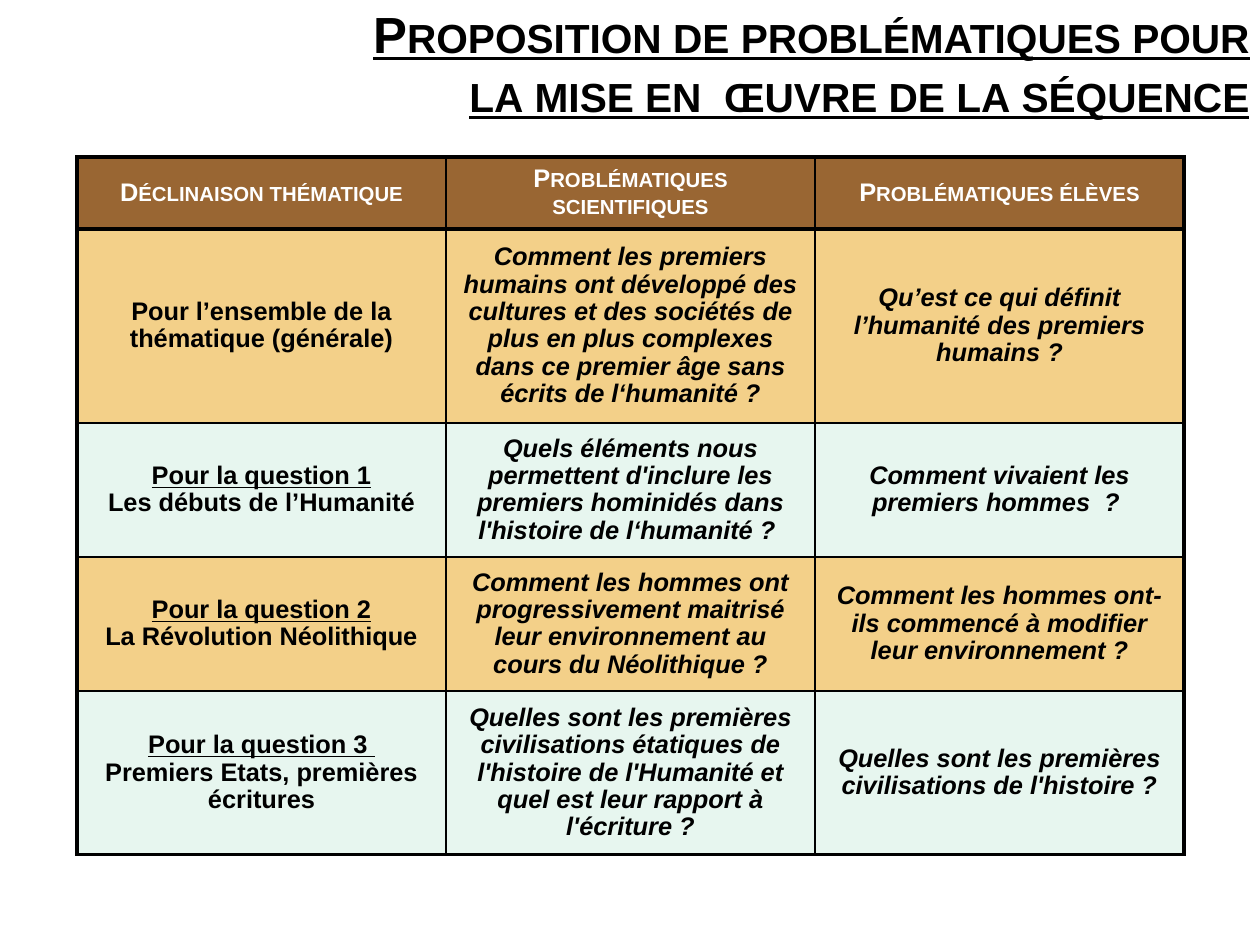
import pptx
import pptx.util
import pptx.dml.color
import pptx.enum.text
import pptx.oxml.ns
import lxml.etree

PX = 8000  # EMU in one px
HUES = {"ink": "000000", "white": "FFFFFF", "brown": "996633",
        "sand": "F3D089", "mint": "E7F6EF"}
FACE = "Arial"
ALIGN = pptx.enum.text.PP_ALIGN
ANCHOR = pptx.enum.text.MSO_ANCHOR


def style(para, size, hue, align, caps=False, line=False, slant=False):
    para.alignment = align
    para.line_spacing = 0.97
    for run in para.runs:
        font = run.font
        font.name, font.size = FACE, pptx.util.Pt(size)
        font.bold, font.italic, font.underline = True, slant, line
        font.color.rgb = pptx.dml.color.RGBColor.from_string(HUES[hue])
        if caps:
            run._r.get_or_add_rPr().set("cap", "small")


def border(cell, side, width):
    """Draw one side (L, R, T or B) of a cell, width in points."""
    name = pptx.oxml.ns.qn
    line = lxml.etree.SubElement(cell._tc.get_or_add_tcPr(), name("a:ln" + side),
                                 w=str(pptx.util.Pt(width)))
    fill = lxml.etree.SubElement(line, name("a:solidFill"))
    lxml.etree.SubElement(fill, name("a:srgbClr"), val=HUES["ink"])


deck = pptx.Presentation()
deck.slide_width, deck.slide_height = 1260 * PX, 945 * PX
slide = deck.slides.add_slide(deck.slide_layouts[5])

# Title
title = slide.shapes.title
title.left, title.top, title.width, title.height = 351 * PX, 0, 910 * PX, 126 * PX
frame = title.text_frame
frame.text = "Proposition de problématiques pour la mise en  œuvre de la séquence"
frame.word_wrap = True
frame.auto_size = pptx.enum.text.MSO_AUTO_SIZE.NONE
frame.vertical_anchor = ANCHOR.TOP
style(frame.paragraphs[0], 32, "ink", ALIGN.RIGHT, caps=True, line=True)

# Table
ROWS = [
    ("Déclinaison thématique", "Problématiques scientifiques",
     "Problématiques élèves"),
    ("Pour l’ensemble de la thématique (générale)",
     "Comment les premiers humains ont développé des cultures et des sociétés "
     "de plus en plus complexes dans ce premier âge sans écrits de l‘humanité ?",
     "Qu’est ce qui définit l’humanité des premiers humains ?"),
    ("Pour la question 1\nLes débuts de l’Humanité",
     "Quels éléments nous permettent d'inclure les premiers hominidés dans "
     "l'histoire de l‘humanité ? ",
     "Comment vivaient les premiers hommes  ? "),
    ("Pour la question 2\nLa Révolution Néolithique",
     "Comment les hommes ont progressivement maitrisé leur environnement "
     "au cours du Néolithique ?",
     "Comment les hommes ont-ils commencé à modifier leur environnement ?"),
    ("Pour la question 3 \nPremiers Etats, premières écritures",
     "Quelles sont les premières civilisations étatiques de l'histoire de "
     "l'Humanité et quel est leur rapport à l'écriture ?",
     "Quelles sont les premières civilisations de l'histoire ?"),
]
TALL = [72, 194, 134, 134, 164]
WIDE = 369
THICK, THIN = 2.25, 1

last = len(ROWS) - 1
table = slide.shapes.add_table(len(ROWS), 3, 77 * PX, 157 * PX,
                               3 * WIDE * PX, sum(TALL) * PX).table
table.horz_banding = False
for col in table.columns:
    col.width = WIDE * PX

for r, texts in enumerate(ROWS):
    table.rows[r].height = TALL[r] * PX
    head = r == 0
    back = "brown" if head else "sand" if r % 2 else "mint"
    for c, text in enumerate(texts):
        cell = table.cell(r, c)
        border(cell, "L", THICK if c == 0 else THIN)
        border(cell, "R", THICK if c == 2 else THIN)
        border(cell, "T", THICK if r < 2 else THIN)
        border(cell, "B", THICK if r in (0, last) else THIN)
        cell.fill.solid()
        cell.fill.fore_color.rgb = pptx.dml.color.RGBColor.from_string(HUES[back])
        cell.vertical_anchor = ANCHOR.MIDDLE
        cell.text_frame.text = text
        for n, para in enumerate(cell.text_frame.paragraphs):
            style(para, 16, "white" if head else "ink", ALIGN.CENTER, caps=head,
                  line=n == 0 and "\n" in text, slant=not head and c > 0)

deck.save("out.pptx")
